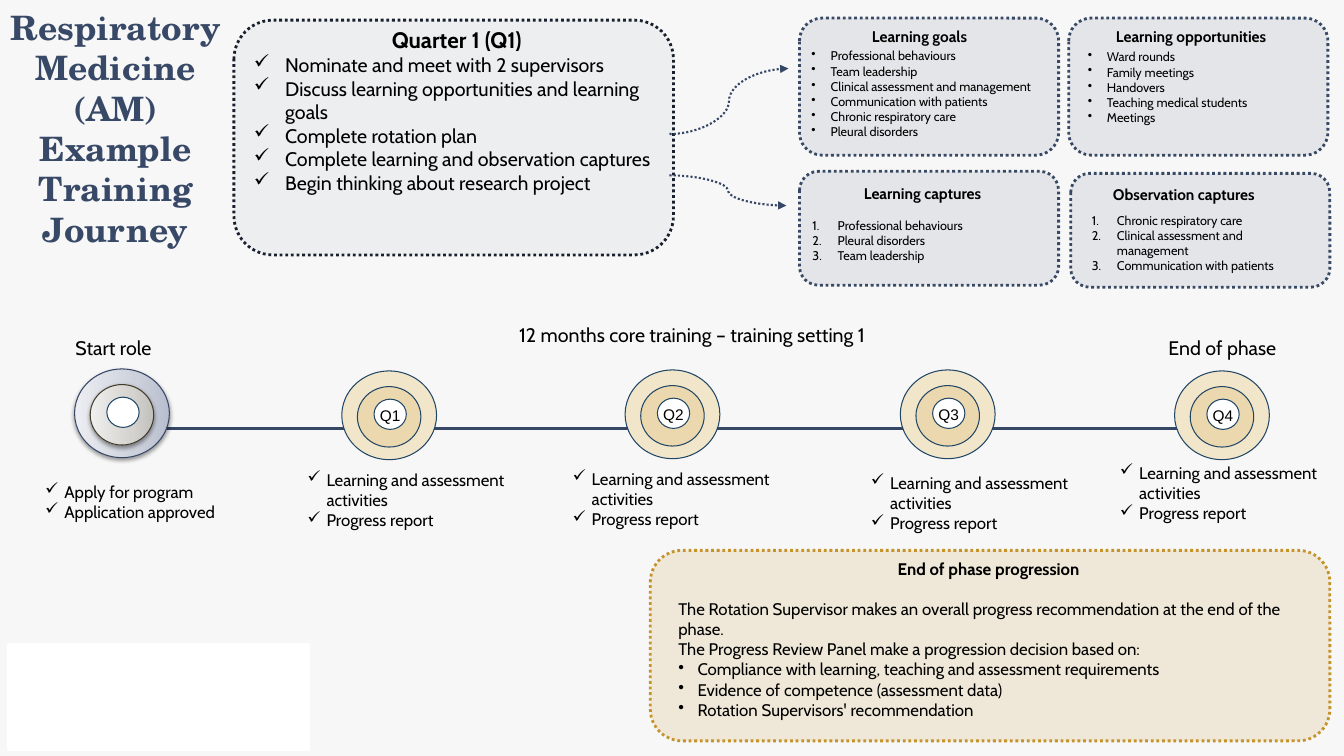
from dataclasses import dataclass
from typing import Optional

from lxml.etree import SubElement
from pptx import Presentation
from pptx.dml.color import RGBColor
from pptx.enum.dml import MSO_LINE
from pptx.enum.shapes import MSO_CONNECTOR, MSO_SHAPE
from pptx.enum.text import MSO_ANCHOR, MSO_AUTO_SIZE, PP_ALIGN
from pptx.oxml.ns import qn
from pptx.util import Inches, Pt

BLACK = RGBColor(0x00, 0x00, 0x00)
WHITE = RGBColor(0xFF, 0xFF, 0xFF)
PAPER = RGBColor(0xF7, 0xF7, 0xF7)
NAVY = RGBColor(0x36, 0x47, 0x66)
SLATE = RGBColor(0x38, 0x49, 0x65)
TITLE_BLUE = RGBColor(0x38, 0x49, 0x67)
INK = RGBColor(0x19, 0x20, 0x2D)
RING_BLUE = RGBColor(0x20, 0x46, 0x66)
BROWN = RGBColor(0x42, 0x3D, 0x29)
CREAM = RGBColor(0xF2, 0xE6, 0xCA)
SAND = RGBColor(0xD3, 0xA4, 0x40)
GOLD = RGBColor(0xC5, 0x93, 0x2B)

SILVER_BLUE = ((0, "B8BECE"), (35, "CDD1DC"), (100, "ECEEF2"))
SILVER_GREY = ((0, "C3C1BC"), (35, "D5D3D0"), (100, "EFEFED"))

CHECK, DOT, NUMBER = "✓", "•", "1."


@dataclass
class Line:
    text: str
    size: float
    bullet: str = ""
    indent: float = 0.19
    bold: bool = False
    centred: bool = False
    before: float = 0


@dataclass
class TextBox:
    left: float
    top: float
    width: float
    height: float
    lines: list[Line]
    wrap: bool = True
    font: str = "Cabin"
    color: RGBColor = BLACK


@dataclass
class Panel:
    left: float
    top: float
    width: float
    height: float
    color: RGBColor
    opacity: int
    border: RGBColor


@dataclass
class Ring:
    left: float
    top: float
    width: float
    height: float
    border: RGBColor
    color: RGBColor = WHITE
    opacity: int = 100
    gradient: Optional[tuple] = None


def items(texts: list[str], size: float, bullet: str, indent: float = 0.19) -> list[Line]:
    return [Line(text, size, bullet, indent) for text in texts]


def label(left: float, top: float, width: float, height: float, text: str,
          size: float, bold: bool = False) -> TextBox:
    return TextBox(left, top, width, height, [Line(text, size, bold=bold)], wrap=False)


def add_box(page, box: TextBox):
    shape = page.shapes.add_textbox(*map(Inches, (box.left, box.top, box.width, box.height)))
    frame = shape.text_frame
    frame.word_wrap = box.wrap
    frame.auto_size = MSO_AUTO_SIZE.SHAPE_TO_FIT_TEXT
    for index, line in enumerate(box.lines):
        para = frame.add_paragraph() if index else frame.paragraphs[0]
        para.alignment = PP_ALIGN.CENTER if line.centred else PP_ALIGN.LEFT
        if line.before:
            para.space_before = Pt(line.before)
        if line.bullet:
            properties = para._p.get_or_add_pPr()
            properties.set("marL", str(Inches(line.indent)))
            properties.set("indent", str(-Inches(line.indent)))
            if line.bullet == NUMBER:
                SubElement(properties, qn("a:buAutoNum"), type="arabicPeriod")
            else:
                SubElement(properties, qn("a:buChar"), char=line.bullet)
        span = para.add_run()
        span.text = line.text
        format_values = {"name": box.font, "size": Pt(line.size), "bold": line.bold}
        for name, value in format_values.items():
            setattr(span.font, name, value)
        span.font.color.rgb = box.color
    return shape


def add_filled(page, kind: MSO_SHAPE, box: Panel | Ring, border_width: float):
    shape = page.shapes.add_shape(kind, *map(Inches, (box.left, box.top, box.width, box.height)))
    shape.shadow.inherit = False
    shape.fill.solid()
    shape.fill.fore_color.rgb = box.color
    if box.opacity < 100:
        color = shape._element.spPr.find(qn("a:solidFill")).find(qn("a:srgbClr"))
        SubElement(color, qn("a:alpha"), val=str(box.opacity * 1000))
    shape.line.color.rgb = box.border
    shape.line.width = Pt(border_width)
    return shape


def add_panel(page, panel: Panel) -> None:
    add_filled(page, MSO_SHAPE.ROUNDED_RECTANGLE, panel, 2).line.dash_style = MSO_LINE.ROUND_DOT


def add_ring(page, ring: Ring) -> None:
    shape = add_filled(page, MSO_SHAPE.OVAL, ring, 0.75)
    shape.rotation = 270
    if not ring.gradient:
        return
    shape.fill.gradient()
    shape.fill.gradient_angle = 90
    properties = shape._element.spPr
    stops = properties.find(qn("a:gradFill")).find(qn("a:gsLst"))
    for stop in list(stops):
        stops.remove(stop)
    for position, color in ring.gradient:
        stop = SubElement(stops, qn("a:gs"), pos=str(position * 1000))
        SubElement(stop, qn("a:srgbClr"), val=color)
    shadow = SubElement(properties.find(qn("a:effectLst")), qn("a:outerShdw"),
                        blurRad=str(Pt(3.1)), dist=str(Pt(1.6)), dir="5400000", rotWithShape="0")
    SubElement(SubElement(shadow, qn("a:srgbClr"), val="000000"), qn("a:alpha"), val="38000")


def add_line(page, kind: MSO_CONNECTOR, ends: tuple, width: float, arrow: bool = False) -> None:
    connector = page.shapes.add_connector(kind, *map(Inches, ends))
    connector.line.color.rgb = NAVY
    connector.line.width = Pt(width)
    if arrow:
        connector.line.dash_style = MSO_LINE.ROUND_DOT
        SubElement(connector.line._get_or_add_ln(), qn("a:tailEnd"), type="triangle")
    SubElement(connector._element.spPr, qn("a:effectLst"))


def add_stage(page, left: float, top: float, name: str) -> None:
    start = not name
    add_ring(page, Ring(left, top, 0.88, 0.94, NAVY if start else RING_BLUE, CREAM,
                        gradient=SILVER_BLUE if start else None))
    add_ring(page, Ring(left + 0.14, top + 0.17, 0.6, 0.63, BROWN if start else RING_BLUE, SAND,
                        100 if start else 20, SILVER_GREY if start else None))
    add_ring(page, Ring(left + 0.3, top + 0.3, 0.3, 0.32, RING_BLUE))
    if name:
        add_box(page, TextBox(left + 0.25, top + 0.33, 0.83, 0.29, [Line(name, 11)], font="Arial"))


STAGES = [(0.77, 3.63, ""), (3.42, 3.65, "Q1"), (6.23, 3.64, "Q2"),
          (8.96, 3.64, "Q3"), (11.68, 3.65, "Q4")]
PANELS = [Panel(left, top, 2.57, height, SLATE, 10, SLATE) for left, top, height in
          [(7.93, 0.18, 1.36), (7.93, 1.7, 1.13), (10.6, 0.18, 1.36), (10.62, 1.72, 1.13)]]
PANELS += [Panel(2.32, 0.2, 4.36, 2.33, SLATE, 5, INK), Panel(6.45, 5.46, 6.74, 1.89, GOLD, 15, GOLD)]

QUARTER_STEPS = ["Nominate and meet with 2 supervisors", "Discuss learning opportunities and learning goals",
                 "Complete rotation plan", "Complete learning and observation captures",
                 "Begin thinking about research project"]
GOALS = ["Professional behaviours", "Team leadership", "Clinical assessment and management",
         "Communication with patients", "Chronic respiratory care", "Pleural disorders"]
OPPORTUNITIES = ["Ward rounds", "Family meetings", "Handovers", "Teaching medical students", "Meetings"]
LEARNING_CAPTURES = ["Professional behaviours", "Pleural disorders", "Team leadership"]
OBSERVATIONS = ["Chronic respiratory care", "Clinical assessment and management", "Communication with patients"]
DECISION_BASIS = ["Compliance with learning, teaching and assessment requirements",
                  "Evidence of competence (assessment data)", "Rotation Supervisors' recommendation"]
PROGRESSION = [
    Line("End of phase progression", 12, bold=True, centred=True),
    Line("The Rotation Supervisor makes an overall progress recommendation at the end of the phase.",
         12, before=14.4),
    Line("The Progress Review Panel make a progression decision based on:", 12)]

BOXES = [
    TextBox(2.42, 0.21, 4.22, 2.22, [Line("Quarter 1 (Q1)", 16, bold=True, centred=True)]
            + items(QUARTER_STEPS, 14, CHECK, 0.31)),
    label(8.55, 0.22, 1.22, 0.29, "Learning goals", 11, True),
    label(10.97, 0.22, 1.83, 0.29, "Learning opportunities", 11, True),
    label(8.47, 1.78, 1.49, 0.29, "Learning captures", 11, True),
    label(10.94, 1.79, 1.74, 0.29, "Observation captures", 11, True),
    TextBox(7.95, 0.43, 2.68, 1.01, items(GOALS, 9, DOT)),
    TextBox(10.69, 0.44, 2.28, 0.86, items(OPPORTUNITIES, 9, DOT)),
    TextBox(7.96, 2.11, 2.28, 0.56, items(LEARNING_CAPTURES, 9, NUMBER, 0.25)),
    TextBox(10.73, 2.06, 2.28, 0.71, items(OBSERVATIONS, 9, NUMBER, 0.25)),
    label(0.65, 3.28, 0.97, 0.34, "Start role", 14),
    label(5.05, 3.15, 3.76, 0.34, "12 months core training – training setting 1", 14),
    label(11.49, 3.28, 1.35, 0.34, "End of phase", 14),
    TextBox(0.35, 4.73, 2.16, 0.5, items(["Apply for program", "Application approved"], 12, CHECK)),
    TextBox(6.63, 5.49, 6.35, 1.72, PROGRESSION + items(DECISION_BASIS, 12, DOT))]
BOXES += [TextBox(left, top, width, 0.71,
                  items(["Learning and assessment activities", "Progress report"], 12, CHECK))
          for left, top, width in [(2.95, 4.61, 2.19), (5.58, 4.6, 2.62), (8.54, 4.64, 2.19), (11.01, 4.54, 2.32)]]
TITLE = TextBox(0, 0.63, 2.29, 1.28,
                [Line(text, 24, bold=True, centred=True)
                 for text in ("Respiratory Medicine (AM)", "Example", "Training Journey")],
                font="TeX Gyre Schola", color=TITLE_BLUE)


def main() -> None:
    deck = Presentation()
    deck.slide_width, deck.slide_height = Inches(13.33), Inches(7.5)
    page = deck.slides.add_slide(deck.slide_layouts[6])
    page.background.fill.solid()
    page.background.fill.fore_color.rgb = PAPER
    add_line(page, MSO_CONNECTOR.STRAIGHT, (0.9, 4.25, 12.34, 4.25), 2.25)
    for stage in STAGES:
        add_stage(page, *stage)
    for panel in PANELS:
        add_panel(page, panel)
    for ends in [(6.64, 1.33, 7.82, 0.68), (6.64, 1.74, 7.8, 2.04)]:
        add_line(page, MSO_CONNECTOR.CURVE, ends, 1.5, arrow=True)
    for box in BOXES:
        add_box(page, box)
    frame = add_box(page, TITLE).text_frame
    title_format = {"auto_size": MSO_AUTO_SIZE.NONE, "vertical_anchor": MSO_ANCHOR.MIDDLE,
                    "margin_left": Inches(0.07), "margin_right": Inches(0.07),
                    "margin_top": Inches(0.04), "margin_bottom": Inches(0.04)}
    for name, value in title_format.items():
        setattr(frame, name, value)
    add_filled(page, MSO_SHAPE.RECTANGLE, Panel(0.08, 6.39, 2.98, 1.05, WHITE, 100, WHITE), 2)
    deck.save("out.pptx")


if __name__ == "__main__":
    main()
